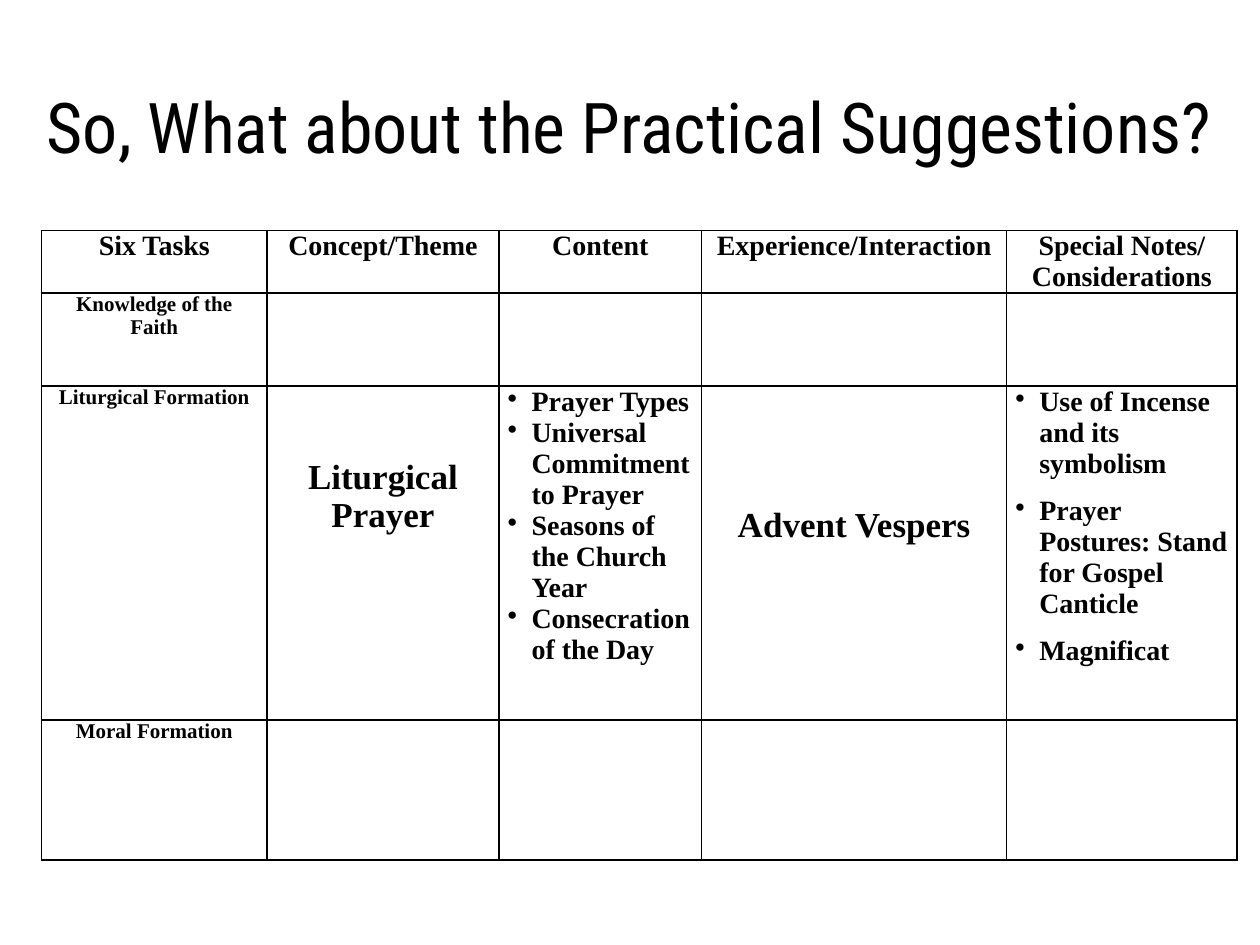
import pptx
import pptx.util
import pptx.dml.color
import pptx.enum.text
import pptx.oxml
import lxml.etree

Inches, Pt = pptx.util.Inches, pptx.util.Pt
CENTER = pptx.enum.text.PP_ALIGN.CENTER
LEFT = pptx.enum.text.PP_ALIGN.LEFT
NS = "http://schemas.openxmlformats.org/drawingml/2006/main"


def color(hex_code):
    return pptx.dml.color.RGBColor.from_string(hex_code)


def add_border(cell, side):
    cell._tc.get_or_add_tcPr().append(pptx.oxml.parse_xml(
        f'<a:{side} xmlns:a="{NS}" w="12700"><a:solidFill>'
        f'<a:srgbClr val="000000"/></a:solidFill></a:{side}>'))


prs = pptx.Presentation()
prs.slide_width, prs.slide_height = Inches(10), Inches(7.5)
slide = prs.slides.add_slide(prs.slide_layouts[5])

title = slide.shapes.title
title.left, title.top = Inches(0.08), Inches(0.58)
title.width, title.height = Inches(9.83), Inches(0.83)
title.text_frame.text = "So, What about the Practical Suggestions?"
title.text_frame.vertical_anchor = pptx.enum.text.MSO_ANCHOR.MIDDLE
heading = title.text_frame.paragraphs[0]
heading.alignment = CENTER
heading.font.name = "Roboto Condensed"
heading.font.size = Pt(40)
heading.font.color.rgb = color("000000")

column_widths = [1.79, 1.84, 1.61, 2.42, 1.83]
row_heights = [0.49, 0.74, 2.65, 1.11]
headers = ["Six Tasks", "Concept/Theme", "Content", "Experience/Interaction",
           "Special Notes/\nConsiderations"]
tasks = ["Knowledge of the Faith", "Liturgical Formation", "Moral Formation"]
contents = ["Prayer Types", "Universal Commitment to Prayer",
            "Seasons of the Church Year", "Consecration of the Day"]
notes = ["Use of Incense and its symbolism",
         "Prayer Postures: Stand for Gospel Canticle", "Magnificat"]

# (row, column): text, size, top margin, bulleted, gap between paragraphs
entries = {(0, c): (text, 16, 0, False, 0) for c, text in enumerate(headers)}
entries.update({(r, 0): (text, 12, 0, False, 0) for r, text in enumerate(tasks, 1)})
entries[2, 1] = ("Liturgical Prayer", 20, 0.57, False, 0)
entries[2, 2] = ("\n".join(contents), 16, 0, True, 0)
entries[2, 3] = ("Advent Vespers", 20, 0.95, False, 0)
entries[2, 4] = ("\n".join(notes), 16, 0, True, 9)

task_table = slide.shapes.add_table(
    len(row_heights), len(column_widths), Inches(0.33), Inches(1.83),
    Inches(sum(column_widths)), Inches(sum(row_heights))).table
task_table.first_row = False
task_table.horz_banding = False
for column, width in zip(task_table.columns, column_widths):
    column.width = Inches(width)
for row, height in zip(task_table.rows, row_heights):
    row.height = Inches(height)

for r in range(len(row_heights)):
    for c in range(len(column_widths)):
        cell = task_table.cell(r, c)
        text, size, top, bulleted, gap = entries.get((r, c), ("", 12, 0, False, 0))
        cell.margin_left = cell.margin_right = Inches(0.07)
        cell.margin_top, cell.margin_bottom = Inches(top), Inches(0)
        for side in ("lnL", "lnR", "lnT", "lnB"):
            add_border(cell, side)
        cell.fill.solid()
        cell.fill.fore_color.rgb = color("FFFFFF")
        cell.text_frame.text = text
        for i, paragraph in enumerate(cell.text_frame.paragraphs):
            paragraph.alignment = LEFT if bulleted else CENTER
            if gap and i:
                paragraph.space_before = Pt(gap)
            if bulleted:
                properties = paragraph._p.get_or_add_pPr()
                properties.set("marL", str(Inches(0.19)))
                properties.set("indent", str(-Inches(0.19)))
                bullet = lxml.etree.SubElement(properties, f"{{{NS}}}buChar")
                bullet.set("char", "•")
            paragraph.font.name = "Times New Roman"
            paragraph.font.size = Pt(size)
            paragraph.font.bold = True
            paragraph.font.color.rgb = color("000000")

prs.save("out.pptx")
